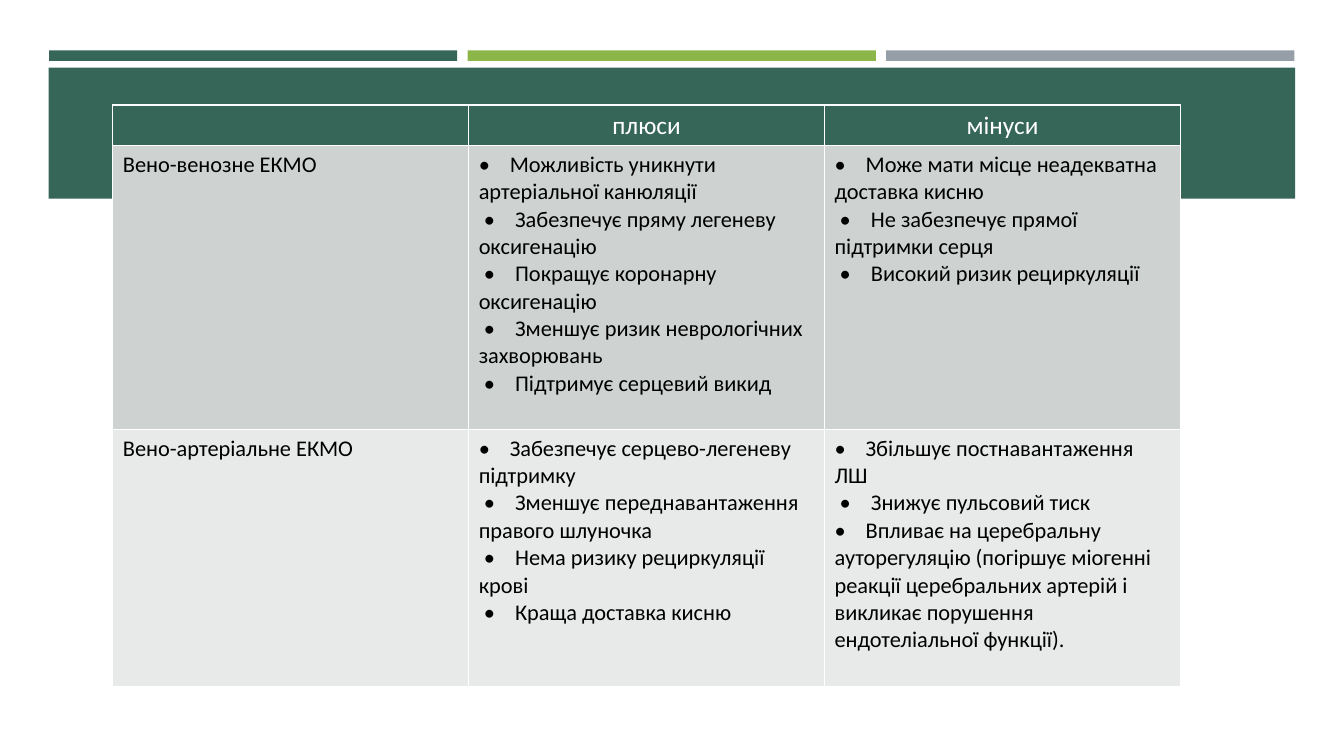
from lxml import etree
from pptx import Presentation
from pptx.dml.color import RGBColor
from pptx.enum.shapes import MSO_SHAPE
from pptx.enum.text import PP_ALIGN
from pptx.oxml.ns import qn
from pptx.util import Pt

RECT = MSO_SHAPE.RECTANGLE
LEFT, CENTER = PP_ALIGN.LEFT, PP_ALIGN.CENTER

COLORS = {
    "green": "366658", "lime": "8CB64A", "gray": "969FA7",
    "dark": "CED3D1", "light": "E8EAEA", "white": "FFFFFF", "black": "000000",
}
FONT = "Calibri"
BARS = ["green", "lime", "gray"]
ROWS = [
    [[], ["плюси"], ["мінуси"]],
    [
        ["Вено-венозне ЕКМО"],
        [
            "•\tМожливість уникнути артеріальної канюляції",
            " •\tЗабезпечує пряму легеневу оксигенацію",
            " •\tПокращує коронарну оксигенацію",
            " •\tЗменшує ризик неврологічних захворювань",
            " •\tПідтримує серцевий викид",
        ],
        [
            "•\tМоже мати місце неадекватна доставка кисню",
            " •\tНе забезпечує прямої підтримки серця",
            " •\tВисокий ризик рециркуляції",
        ],
    ],
    [
        ["Вено-артеріальне ЕКМО"],
        [
            "•\tЗабезпечує серцево-легеневу підтримку",
            " •\tЗменшує переднавантаження правого шлуночка",
            " •\tНема ризику рециркуляції крові",
            " •\tКраща доставка кисню",
        ],
        [
            "•\tЗбільшує постнавантаження ЛШ",
            " •\tЗнижує пульсовий тиск",
            "•\tВпливає на церебральну ауторегуляцію (погіршує міогенні реакції "
            "церебральних артерій і викликає порушення ендотеліальної функції).",
        ],
    ],
]
STYLES = [
    ("green", "white", 18, CENTER),
    ("dark", "black", 16, LEFT),
    ("light", "black", 16, LEFT),
]
HEIGHTS = [29, 202.8, 183.4]
COL = 254.2


def rgb(name):
    return RGBColor.from_string(COLORS[name])


def add_rect(slide, left, top, width, height, color):
    rect = slide.shapes.add_shape(RECT, Pt(left), Pt(top), Pt(width), Pt(height))
    rect.shadow.inherit = False
    rect.fill.solid()
    rect.fill.fore_color.rgb = rgb(color)
    rect.line.fill.background()


def add_edges(cell):
    props = cell._tc.get_or_add_tcPr()
    for side in ("lnL", "lnR", "lnT", "lnB"):
        edge = etree.SubElement(props, qn("a:" + side), w=str(Pt(1)))
        fill = etree.SubElement(edge, qn("a:solidFill"))
        etree.SubElement(fill, qn("a:srgbClr"), val=COLORS["white"])


def add_tab(para, text):
    props = para._p.get_or_add_pPr()
    tabs = etree.SubElement(props, qn("a:tabLst"))
    stop = Pt(26 if text.startswith(" ") else 22.2)
    etree.SubElement(tabs, qn("a:tab"), pos=str(stop), algn="l")


def fill_cell(cell, lines, style):
    back, ink, size, align = style
    add_edges(cell)
    cell.fill.solid()
    cell.fill.fore_color.rgb = rgb(back)
    cell.margin_left = cell.margin_right = Pt(7.2)
    cell.margin_top = cell.margin_bottom = Pt(3.6)
    frame = cell.text_frame
    for i, text in enumerate(lines):
        para = frame.add_paragraph() if i else frame.paragraphs[0]
        para.text = text
        para.alignment = align
        if "\t" in text:
            add_tab(para, text)
        font = para.font
        font.name, font.size, font.bold = FONT, Pt(size), False
        font.color.rgb = rgb(ink)


def main():
    deck = Presentation()
    deck.slide_width, deck.slide_height = Pt(960), Pt(540)
    slide = deck.slides.add_slide(deck.slide_layouts[6])

    for i, color in enumerate(BARS):
        add_rect(slide, 35 + i * 299, 36, 291.6, 7.6, color)
    add_rect(slide, 34.8, 48.4, 890.4, 93.6, "green")

    frame = slide.shapes.add_table(
        len(ROWS), len(ROWS[0]), Pt(80.6), Pt(75), Pt(COL * 3), Pt(sum(HEIGHTS)))
    table = frame.table
    table.horz_banding = False
    for col in table.columns:
        col.width = Pt(COL)
    for r, (row, style) in enumerate(zip(ROWS, STYLES)):
        table.rows[r].height = Pt(HEIGHTS[r])
        for c, lines in enumerate(row):
            fill_cell(table.cell(r, c), lines, style)

    deck.save("out.pptx")


if __name__ == "__main__":
    main()
